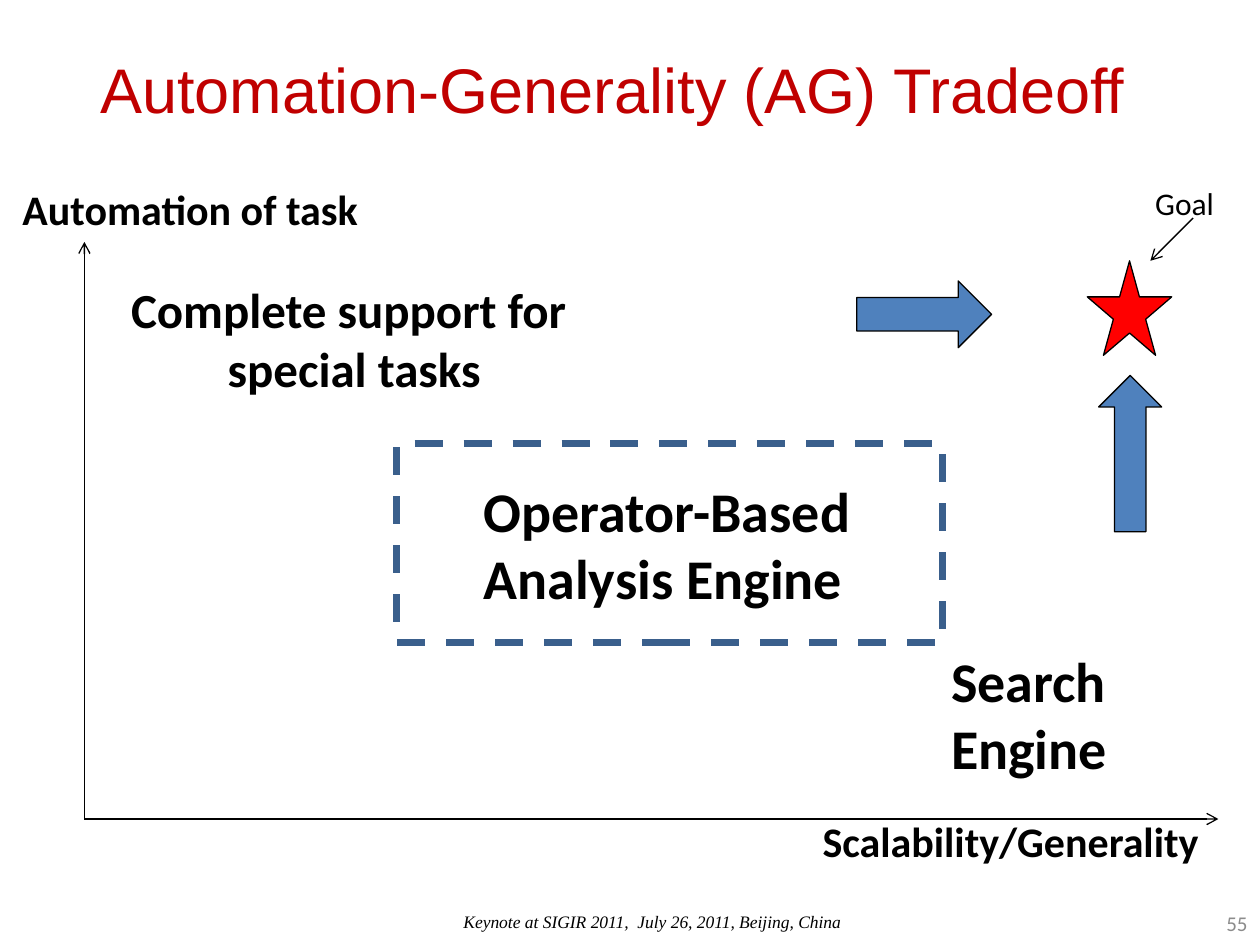
import pptx
import pptx.util
import pptx.dml.color
import pptx.enum.dml
import pptx.enum.shapes
import pptx.enum.text
import pptx.oxml
import pptx.oxml.ns

PX = 9144  # EMU per px, 100 px to the inch
COLORS = {
    "title": "C00000", "text": "000000", "number": "8C8C8C", "line": "000000",
    "goal": "FF0000", "arrow": "4F81BD", "frame": "3A5F8C",
}
SHAPE = pptx.enum.shapes.MSO_SHAPE
ALIGN = pptx.enum.text.PP_ALIGN
ANCHOR = pptx.enum.text.MSO_ANCHOR


def rgb(name):
    return pptx.dml.color.RGBColor.from_string(COLORS[name])


def emu(*lengths):
    return [pptx.util.Emu(length * PX) for length in lengths]


def write(frame, lines, size, color="text", font="Calibri", align=ALIGN.LEFT,
          bold=False, italic=False):
    for index, line in enumerate(lines):
        para = frame.add_paragraph() if index else frame.paragraphs[0]
        para.alignment = align
        span = para.add_run()
        span.text = line
        span.font.name = font
        span.font.size = pptx.util.Pt(size)
        span.font.bold = bold
        span.font.italic = italic
        span.font.color.rgb = rgb(color)


def add_label(page, box, lines, size, wrap=False, anchor=ANCHOR.TOP, **style):
    frame = page.shapes.add_textbox(*emu(*box)).text_frame
    frame.word_wrap = wrap
    frame.vertical_anchor = anchor
    write(frame, lines, size, **style)


def add_arrow_line(page, start, end):
    line = page.shapes.add_connector(
        pptx.enum.shapes.MSO_CONNECTOR.STRAIGHT, *emu(*start, *end))
    line.line.color.rgb = rgb("line")
    line.line.width = pptx.util.Pt(0.75)
    head = pptx.oxml.parse_xml(
        '<a:tailEnd %s type="arrow"/>' % pptx.oxml.ns.nsdecls("a"))
    line.line._get_or_add_ln().append(head)
    line._element.spPr.append(pptx.oxml.parse_xml(
        "<a:effectLst %s/>" % pptx.oxml.ns.nsdecls("a")))


def add_figure(page, kind, box, fill=None, line="line", width=0.75):
    figure = page.shapes.add_shape(kind, *emu(*box))
    figure.shadow.inherit = False
    if fill:
        figure.fill.solid()
        figure.fill.fore_color.rgb = rgb(fill)
    else:
        figure.fill.background()
    figure.line.color.rgb = rgb(line)
    figure.line.width = pptx.util.Pt(width)
    return figure


def add_title(page, box, text):
    title = page.shapes.title
    title.left, title.top, title.width, title.height = emu(*box)
    title.text_frame.vertical_anchor = ANCHOR.MIDDLE
    title.text_frame.word_wrap = True
    write(title.text_frame, [text], 36, "title", "Arial", ALIGN.CENTER)


def add_axes(page, box):
    left, top, width, height = box
    origin = (left, top + height)
    add_arrow_line(page, origin, (left, top))
    add_arrow_line(page, origin, (left + width, top + height))
    # Axis names
    add_label(page, (left - 59, top - 51, 383, 50), ["Automation of task"], 24,
              wrap=True, bold=True)
    add_label(page, (left + width - 324, top + height - 8, 323, 50),
              ["Scalability/Generality"], 24, bold=True)


def add_systems(page, box):
    left, top, _, _ = box
    add_label(page, (left + 25, top + 25, 378, 104),
              ["Complete support for ", "special tasks"], 28,
              align=ALIGN.CENTER, bold=True)
    add_label(page, (left + 678, top + 316, 154, 118), ["Search", "Engine"], 32,
              bold=True)
    # Dashed frame around the middle ground
    frame = add_figure(page, SHAPE.RECTANGLE, (left + 248, top + 160, 433, 158),
                       line="frame", width=4)
    frame.line.dash_style = pptx.enum.dml.MSO_LINE.DASH
    add_label(page, (left + 307, top + 181, 315, 118),
              ["Operator-Based", "Analysis Engine"], 32, bold=True)


def add_goal(page, box):
    left, top, width, height = box
    add_figure(page, SHAPE.STAR_5_POINT, box, "goal")
    add_label(page, (left + 44, top - 66, 106, 57), ["Goal"], 18)
    add_arrow_line(page, (left + 84, top - 34), (left + 50, top))
    # Block arrows pointing at the star
    add_figure(page, SHAPE.UP_ARROW, (left + 9, top + height + 16, 50, 124), "arrow")
    add_figure(page, SHAPE.RIGHT_ARROW, (left - 183, top + 16, 107, 53), "arrow")


def add_footer(page, box):
    left, top, width, height = box
    add_label(page, (left, top + 5, 408, height),
              ["Keynote at SIGIR 2011,  July 26, 2011, Beijing, China"], 10,
              wrap=True, font="Times New Roman", italic=True)
    add_label(page, (left + width - 233, top, 233, height), ["55"], 12, wrap=True,
              anchor=ANCHOR.MIDDLE, color="number", align=ALIGN.RIGHT)


def main():
    deck = pptx.Presentation()
    deck.slide_width, deck.slide_height = emu(1000, 750)
    page = deck.slides.add_slide(deck.slide_layouts[5])
    plot = (67, 192, 900, 458)
    add_title(page, (0, 8, 1000, 125), "Automation-Generality (AG) Tradeoff  ")
    add_axes(page, plot)
    add_systems(page, plot)
    add_goal(page, (863, 207, 67, 75))
    add_footer(page, (358, 713, 642, 40))
    deck.save("out.pptx")


if __name__ == "__main__":
    main()
